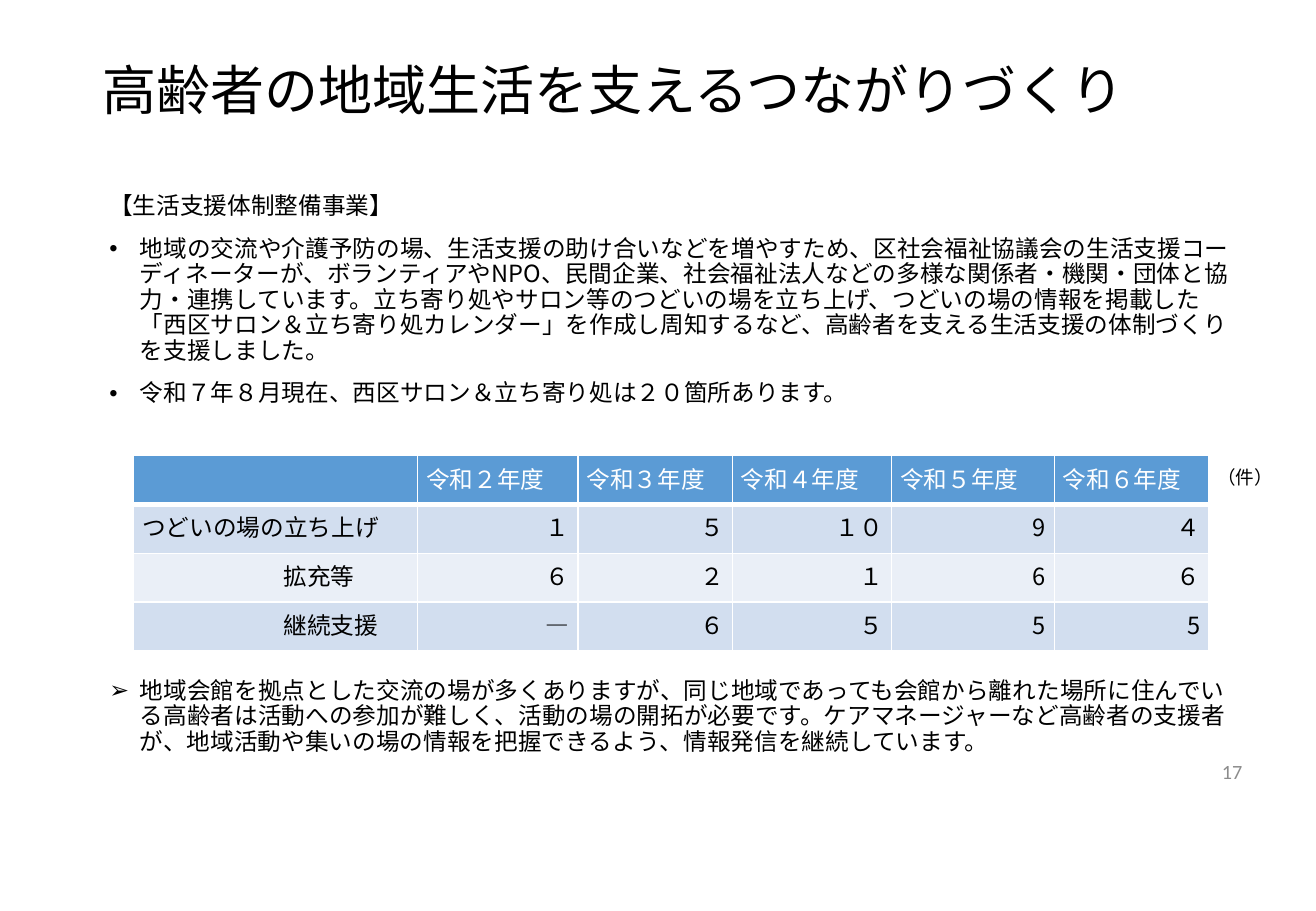
"""Build the slide on community ties that support older residents."""
from lxml.etree import SubElement
from pptx import Presentation
from pptx.dml.color import RGBColor
from pptx.enum.text import MSO_ANCHOR as Anchor, MSO_AUTO_SIZE as AutoSize, PP_ALIGN as Align
from pptx.oxml.ns import qn
from pptx.util import Cm, Pt

JAPANESE_FONT = "Noto Sans CJK JP"
NUMBER_FONT = "Calibri"
BLACK = RGBColor(0x00, 0x00, 0x00)
WHITE = RGBColor(0xFF, 0xFF, 0xFF)
GRAY = RGBColor(0x8C, 0x8C, 0x8C)
HEADER_BLUE = RGBColor(0x5B, 0x9B, 0xD5)
BAND_BLUES = (RGBColor(0xEA, 0xEF, 0xF7), RGBColor(0xD2, 0xDE, 0xEF))

TITLE = "高齢者の地域生活を支えるつながりづくり"
BODY = [
    ("【生活支援体制整備事業】", None, 0),
    ("地域の交流や介護予防の場、生活支援の助け合いなどを増やすため、区社会福祉協議会の"
     "生活支援コーディネーターが、ボランティアやNPO、民間企業、社会福祉法人などの多様な"
     "関係者・機関・団体と協力・連携しています。立ち寄り処やサロン等のつどいの場を立ち上げ、"
     "つどいの場の情報を掲載した「西区サロン＆立ち寄り処カレンダー」を作成し周知するなど、"
     "高齢者を支える生活支援の体制づくりを支援しました。", "•", 10),
    ("令和７年８月現在、西区サロン＆立ち寄り処は２０箇所あります。", "•", 10),
    ("地域会館を拠点とした交流の場が多くありますが、同じ地域であっても会館から離れた場所に"
     "住んでいる高齢者は活動への参加が難しく、活動の場の開拓が必要です。ケアマネージャーなど"
     "高齢者の支援者が、地域活動や集いの場の情報を把握できるよう、情報発信を継続しています。",
     "➢", 161),
]
TABLE_ROWS = [
    ("", "令和２年度", "令和３年度", "令和４年度", "令和５年度", "令和６年度"),
    ("つどいの場の立ち上げ", "１", "５", "１０", "9", "４"),
    ("拡充等", "６", "２", "１", "6", "６"),
    ("継続支援", "―", "６", "５", "5", "5"),
]
COLUMN_WIDTHS = (5.94, 3.35, 3.23, 3.33, 3.4, 3.23)
ROW_HEIGHT = 1.02


def format_runs(paragraph, size, color, font_name=JAPANESE_FONT):
    """Give every run of the paragraph its font, size and colour."""
    for run in paragraph.runs:
        run.font.size = Pt(size)
        run.font.bold = False
        run.font.color.rgb = color
        run.font.name = font_name
        SubElement(run.font._element, qn("a:ea"), typeface=font_name)


def set_indent(paragraph, left, hanging=0):
    """Set the left indent and the hanging first line."""
    properties = paragraph._p.get_or_add_pPr()
    properties.set("marL", str(Cm(left)))
    properties.set("indent", str(-Cm(hanging)))
    return properties


def set_bullet(paragraph, bullet):
    """Set a bullet with a hanging indent, or remove the bullet."""
    indent = 0.64 if bullet else 0
    properties = set_indent(paragraph, indent, indent)
    if bullet:
        SubElement(properties, qn("a:buChar"), char=bullet)
    else:
        SubElement(properties, qn("a:buNone"))


def place(shape, left, top, width, height):
    """Move and size a shape in centimetres."""
    shape.left, shape.top = Cm(left), Cm(top)
    shape.width, shape.height = Cm(width), Cm(height)


def fill_title(shape):
    """Write the slide title."""
    place(shape, 1.88, 0.69, 23.72, 2.51)
    frame = shape.text_frame
    frame.text = TITLE
    frame.auto_size = AutoSize.NONE
    frame.vertical_anchor = Anchor.MIDDLE
    paragraph = frame.paragraphs[0]
    paragraph.alignment = Align.LEFT
    paragraph.line_spacing = 0.9
    format_runs(paragraph, 32, BLACK)


def fill_body(shape):
    """Write the heading and the bulleted paragraphs around the table."""
    place(shape, 2.03, 3.94, 24.31, 12.78)
    frame = shape.text_frame
    frame.text = "\n".join(text for text, _, _ in BODY)
    frame.auto_size = AutoSize.NONE
    frame.vertical_anchor = Anchor.TOP
    for paragraph, (_, bullet, space_before) in zip(frame.paragraphs, BODY):
        set_bullet(paragraph, bullet)
        paragraph.line_spacing = 0.9
        paragraph.space_before = Pt(space_before)
        format_runs(paragraph, 14, BLACK)


def set_borders(cell, row_index):
    """Draw white cell borders, thick below the header row."""
    properties = cell._tc.get_or_add_tcPr()
    widths = {"L": 1, "R": 1, "T": 3 if row_index == 1 else 1, "B": 3 if row_index == 0 else 1}
    for side, width in widths.items():
        line = SubElement(properties, qn(f"a:ln{side}"), w=str(Pt(width)))
        solid = SubElement(line, qn("a:solidFill"))
        SubElement(solid, qn("a:srgbClr"), val=str(WHITE))


def fill_cell(cell, text, row_index, column_index):
    """Write and format one table cell."""
    is_header = row_index == 0
    set_borders(cell, row_index)
    cell.fill.solid()
    cell.fill.fore_color.rgb = HEADER_BLUE if is_header else BAND_BLUES[row_index % 2]
    cell.margin_left = cell.margin_right = Cm(0.18)
    cell.margin_top = cell.margin_bottom = Cm(0.1)
    cell.text_frame.text = text
    paragraph = cell.text_frame.paragraphs[0]
    if row_index > 1 and column_index == 0:
        set_indent(paragraph, 2.96)
    is_value = not is_header and column_index > 0
    paragraph.alignment = Align.RIGHT if is_value else Align.LEFT
    format_runs(paragraph, 14, WHITE if is_header else BLACK)


def add_results_table(slide):
    """Add the yearly table of gathering places."""
    table = slide.shapes.add_table(
        len(TABLE_ROWS), len(COLUMN_WIDTHS), Cm(2.79), Cm(9.53),
        Cm(sum(COLUMN_WIDTHS)), Cm(ROW_HEIGHT * len(TABLE_ROWS))).table
    for column, width in zip(table.columns, COLUMN_WIDTHS):
        column.width = Cm(width)
    for row_index, texts in enumerate(TABLE_ROWS):
        table.rows[row_index].height = Cm(ROW_HEIGHT)
        for column_index, text in enumerate(texts):
            fill_cell(table.cell(row_index, column_index), text, row_index, column_index)


def add_label(slide, text, box, size, color, font_name, alignment):
    """Add a single-line text box."""
    frame = slide.shapes.add_textbox(*map(Cm, box)).text_frame
    frame.text = text
    frame.word_wrap = True
    frame.vertical_anchor = Anchor.MIDDLE
    paragraph = frame.paragraphs[0]
    paragraph.alignment = alignment
    format_runs(paragraph, size, color, font_name)


def main():
    """Build and save the slide."""
    presentation = Presentation()
    presentation.slide_width, presentation.slide_height = Cm(27.51), Cm(19.05)
    slide = presentation.slides.add_slide(presentation.slide_layouts[1])
    fill_title(slide.shapes.title)
    fill_body(slide.placeholders[1])
    add_label(slide, "17", (20.5, 15.75, 5.72, 0.76), 12, GRAY, NUMBER_FONT, Align.RIGHT)
    add_results_table(slide)
    add_label(slide, "（件）", (25.2, 9.61, 1.88, 0.74), 11, BLACK, JAPANESE_FONT, Align.LEFT)
    presentation.save("out.pptx")


if __name__ == "__main__":
    main()
